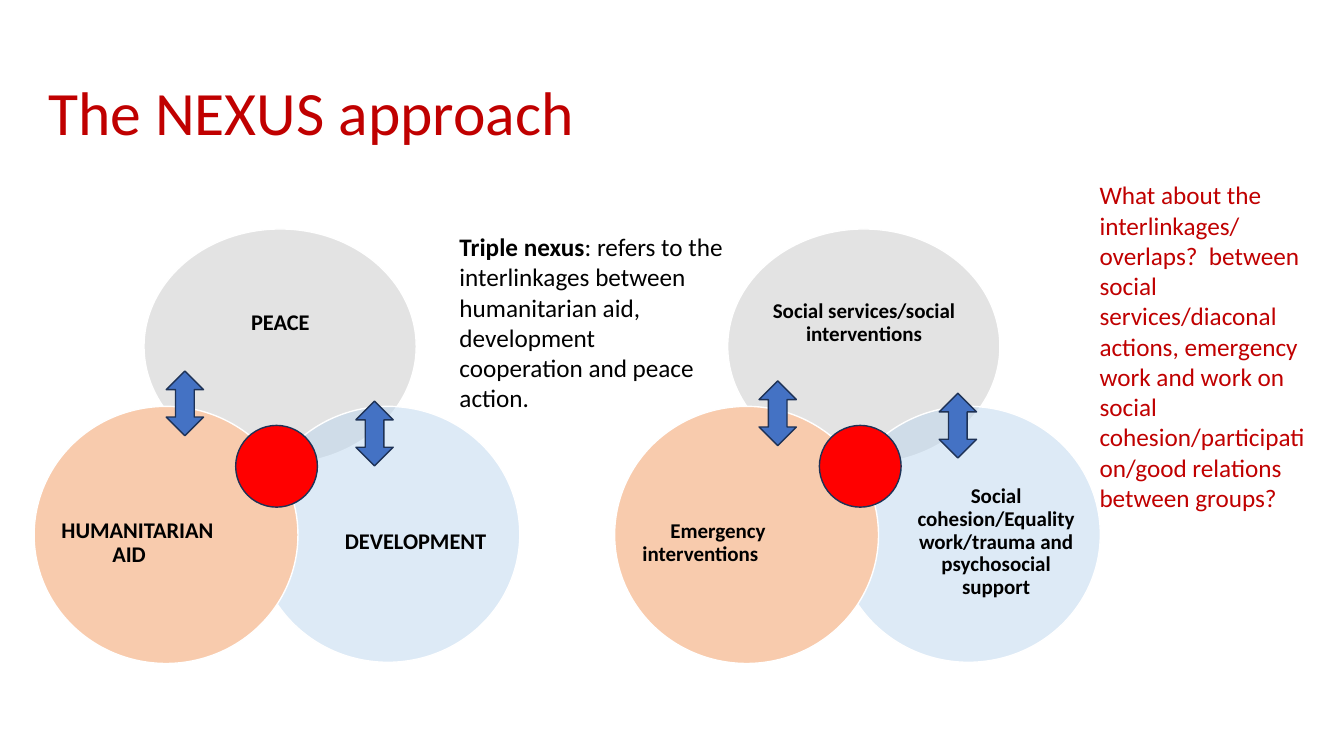
import pptx
import pptx.dml.color
import pptx.enum.shapes
import pptx.enum.text
import pptx.oxml.ns
import pptx.util
import lxml.etree

Cm = pptx.util.Cm
Pt = pptx.util.Pt
Shapes = pptx.enum.shapes.MSO_SHAPE
Align = pptx.enum.text.PP_ALIGN
Anchor = pptx.enum.text.MSO_ANCHOR


class Theme:
    font = "Calibri"
    black, dark_red, white = "000000", "C00000", "FFFFFF"
    peace, development, humanitarian = "C9C9C9", "BDD7EE", "F8CBAD"
    hub, arrow, outline = "FF0000", "4472C4", "1E3256"
    title_size, body_size = 44, 18
    left_label_size, right_label_size = 16, 15


def add_figure(kind, box, fill, line, opacity=100):
    figure = page.shapes.add_shape(kind, *[Cm(length) for length in box])
    figure.shadow.inherit = False
    figure.fill.solid()
    figure.fill.fore_color.rgb = pptx.dml.color.RGBColor.from_string(fill)
    figure.line.color.rgb = pptx.dml.color.RGBColor.from_string(line)
    figure.line.width = Pt(1)
    if opacity < 100:
        color = figure.fill._xPr.find(".//" + pptx.oxml.ns.qn("a:srgbClr"))
        alpha = lxml.etree.SubElement(color, pptx.oxml.ns.qn("a:alpha"))
        alpha.set("val", str(opacity * 1000))


def add_text(box, spans, size, color, anchor=Anchor.TOP):
    frame = page.shapes.add_textbox(*[Cm(length) for length in box]).text_frame
    frame.word_wrap = True
    frame.vertical_anchor = anchor
    para = frame.paragraphs[0]
    for text, bold in spans:
        span = para.add_run()
        span.text = text
        span.font.name = Theme.font
        span.font.size = Pt(size)
        span.font.bold = bold
        span.font.color.rgb = pptx.dml.color.RGBColor.from_string(color)
    return frame


deck = pptx.Presentation()
deck.slide_width, deck.slide_height = Cm(33.87), Cm(19.05)
page = deck.slides.add_slide(deck.slide_layouts[6])

# Title
title = add_text((0.97, 1.07, 15.14, 3.68), [("The NEXUS approach", False)],
                 Theme.title_size, Theme.dark_red, Anchor.MIDDLE)
title.paragraphs[0].line_spacing = 0.9

# Circles, back to front: circle box, label box, shift to the right diagram, fill, opacity
circles = [
    ((3.63, 5.77, 6.86, 5.92), (4.55, 6.81, 5.03, 2.67), 14.71, Theme.peace, 50),
    ((6.45, 10.24, 6.65, 6.45), (8.48, 11.89, 3.99, 3.56), 14.63, Theme.development, 50),
    ((0.86, 10.24, 6.65, 6.48), (1.47, 11.91, 3.99, 3.56), 14.63, Theme.humanitarian, 100),
]
diagrams = [
    (0, Theme.left_label_size, ["PEACE", "DEVELOPMENT", "HUMANITARIAN AID\t"]),
    (1, Theme.right_label_size, [
        "Social services/social interventions",
        "Social cohesion/Equality work/trauma and psychosocial support",
        "Emergency interventions\t",
    ]),
]
for column, label_size, labels in diagrams:
    for (circle, label_box, shift, fill, opacity), label in zip(circles, labels):
        offset = column * shift
        add_figure(Shapes.OVAL, (circle[0] + offset, *circle[1:]), fill, Theme.white, opacity)
        frame = add_text((label_box[0] + offset, *label_box[1:]), [(label, True)],
                         label_size, Theme.black, Anchor.MIDDLE)
        frame.margin_left = frame.margin_right = frame.margin_top = frame.margin_bottom = 0
        frame.paragraphs[0].alignment = Align.CENTER
        frame.paragraphs[0].line_spacing = 0.9

# Explanations beside the diagrams
explanations = [
    ((11.33, 4.93, 7.14, 9.5), Theme.black, [
        ("Triple nexus", True),
        (": refers to the interlinkages between humanitarian aid, "
         "development cooperation and peace action.", False),
    ]),
    ((27.46, 3.63, 5.97, 10.26), Theme.dark_red, [
        ("What about the interlinkages/ overlaps?  between social services/diaconal "
         "actions, emergency work and work on social cohesion/participation/good "
         "relations between groups?", False),
    ]),
]
for box, color, spans in explanations:
    add_text(box, spans, Theme.body_size, color).margin_top = Cm(0.9)

# Red hubs where the circles meet
for left in (5.94, 20.65):
    add_figure(Shapes.OVAL, (left, 10.72, 2.06, 2.06), Theme.hub, Theme.outline)

# Two-way arrows between the circles
for left, top in [(8.97, 10.11), (4.19, 9.35), (19.13, 9.6), (23.67, 9.91)]:
    add_figure(Shapes.UP_DOWN_ARROW, (left, top, 0.94, 1.63), Theme.arrow, Theme.outline)

deck.save("out.pptx")
